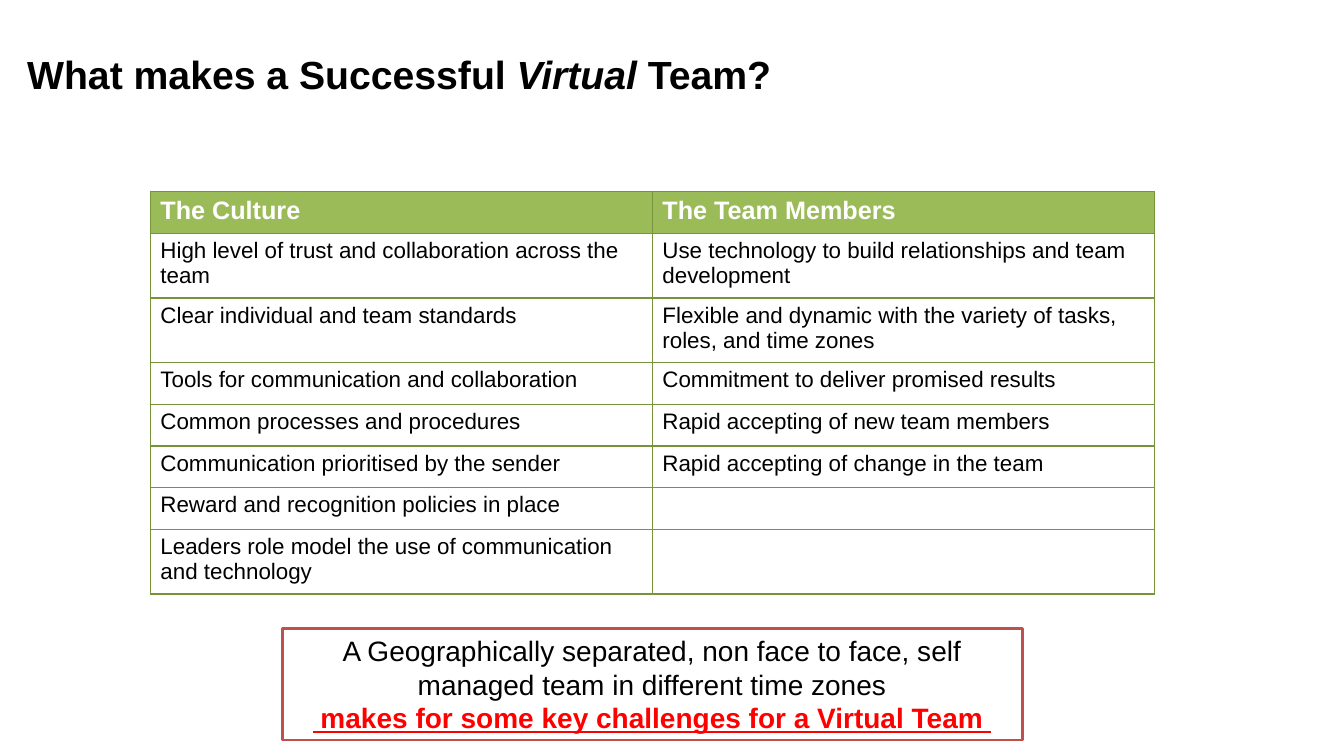
from lxml.etree import SubElement
from pptx import Presentation
from pptx.dml.color import RGBColor
from pptx.enum.shapes import MSO_SHAPE
from pptx.enum.text import MSO_ANCHOR, PP_ALIGN
from pptx.oxml.ns import qn
from pptx.util import Cm, Pt

BLACK = RGBColor(0x00, 0x00, 0x00)
WHITE = RGBColor(0xFF, 0xFF, 0xFF)
GREEN = RGBColor(0x9B, 0xBB, 0x59)
DARK_GREEN = RGBColor(0x77, 0x93, 0x3C)
BRICK = RGBColor(0xC0, 0x50, 0x4D)
RED = RGBColor(0xFF, 0x00, 0x00)

TITLE = [("What makes a Successful ", {}), ("Virtual ", {"italic": True}), ("Team?", {})]
TRAITS = [
    ("The Culture", "The Team Members"),
    ("High level of trust and collaboration across the team",
     "Use technology to build relationships and team development"),
    ("Clear individual and team standards",
     "Flexible and dynamic with the variety of tasks, roles, and time zones"),
    ("Tools for communication and collaboration", "Commitment to deliver promised results"),
    ("Common processes and procedures", "Rapid accepting of new team members"),
    ("Communication prioritised by the sender", "Rapid accepting of change in the team"),
    ("Reward and recognition policies in place", ""),
    ("Leaders role model the use of communication and technology", ""),
]
TALL_ROWS = {1, 2, 7}
CHALLENGE = [
    ("A Geographically separated, non face to face, self managed team in different time zones", {}),
    (" makes for some key challenges for a Virtual Team ",
     {"color": RED, "bold": True, "underline": True}),
]


class SlideBuilder:
    """Hold the text style and the current slide, and add its elements."""

    def __init__(self, slide, font_name="Arial"):
        self.slide = slide
        self.base = {"name": font_name, "color": BLACK, "bold": False, "italic": False}

    def style(self, font, **formats):
        """Apply the base style and the given formats to a font."""
        values = {**self.base, **formats}
        font.color.rgb = values.pop("color")
        for attribute, value in values.items():
            setattr(font, attribute, value)

    def add_text(self, paragraph, text, **formats):
        """Add a styled run to a paragraph."""
        run = paragraph.add_run()
        run.text = text
        self.style(run.font, **formats)

    def title(self, parts, left, top, width, height):
        """Place the title and fill it with its parts."""
        heading = self.slide.shapes.title
        heading.left, heading.top, heading.width, heading.height = left, top, width, height
        frame = heading.text_frame
        frame.word_wrap = True
        frame.vertical_anchor = MSO_ANCHOR.TOP
        paragraph = frame.paragraphs[0]
        paragraph.alignment = PP_ALIGN.LEFT
        paragraph.line_spacing = 0.9
        for text, formats in parts:
            self.add_text(paragraph, text, size=Pt(28), bold=True, **formats)

    def border(self, cell):
        """Draw a thin line on all sides of a cell."""
        properties = cell._tc.get_or_add_tcPr()
        for position, side in enumerate(("a:lnL", "a:lnR", "a:lnT", "a:lnB")):
            line = properties.makeelement(qn(side), {"w": str(Pt(1))})
            properties.insert(position, line)
            fill = SubElement(line, qn("a:solidFill"))
            SubElement(fill, qn("a:srgbClr"), val=str(DARK_GREEN))

    def table(self, rows, tall_rows, left, top, width):
        """Add a bordered table with a coloured header row."""
        heights = [Cm(1.63 if index in tall_rows else 1.05) for index in range(len(rows))]
        grid = self.slide.shapes.add_table(
            len(rows), len(rows[0]), left, top, width, sum(heights)).table
        grid.horz_banding = False
        for index, texts in enumerate(rows):
            grid.rows[index].height = heights[index]
            header = index == 0
            formats = {"size": Pt(18 if header else 16), "bold": header,
                       "color": WHITE if header else BLACK}
            for column, text in enumerate(texts):
                cell = grid.cell(index, column)
                cell.fill.solid()
                cell.fill.fore_color.rgb = GREEN if header else WHITE
                self.border(cell)
                paragraph = cell.text_frame.paragraphs[0]
                if text:
                    self.add_text(paragraph, text, **formats)
                else:
                    self.style(paragraph.font, **formats)

    def callout(self, lines, left, top, width, height):
        """Add a framed box with one centred paragraph per line."""
        box = self.slide.shapes.add_shape(MSO_SHAPE.RECTANGLE, left, top, width, height)
        box.shadow.inherit = False
        box.fill.solid()
        box.fill.fore_color.rgb = WHITE
        box.line.color.rgb = BRICK
        box.line.width = Pt(2)
        frame = box.text_frame
        frame.word_wrap = True
        frame.vertical_anchor = MSO_ANCHOR.MIDDLE
        for index, (text, formats) in enumerate(lines):
            paragraph = frame.add_paragraph() if index else frame.paragraphs[0]
            paragraph.alignment = PP_ALIGN.CENTER
            self.add_text(paragraph, text, size=Pt(20), **formats)


def main():
    """Build and save the presentation."""
    deck = Presentation()
    deck.slide_width, deck.slide_height = Cm(33.87), Cm(19.05)
    builder = SlideBuilder(deck.slides.add_slide(deck.slide_layouts[5]))
    builder.title(TITLE, Cm(0.43), Cm(1.27), Cm(23.32), Cm(2.69))
    builder.table(TRAITS, TALL_ROWS, Cm(3.79), Cm(4.83), Cm(25.3))
    builder.callout(CHALLENGE, Cm(7.11), Cm(15.83), Cm(18.65), Cm(2.82))
    deck.save("out.pptx")


if __name__ == "__main__":
    main()
